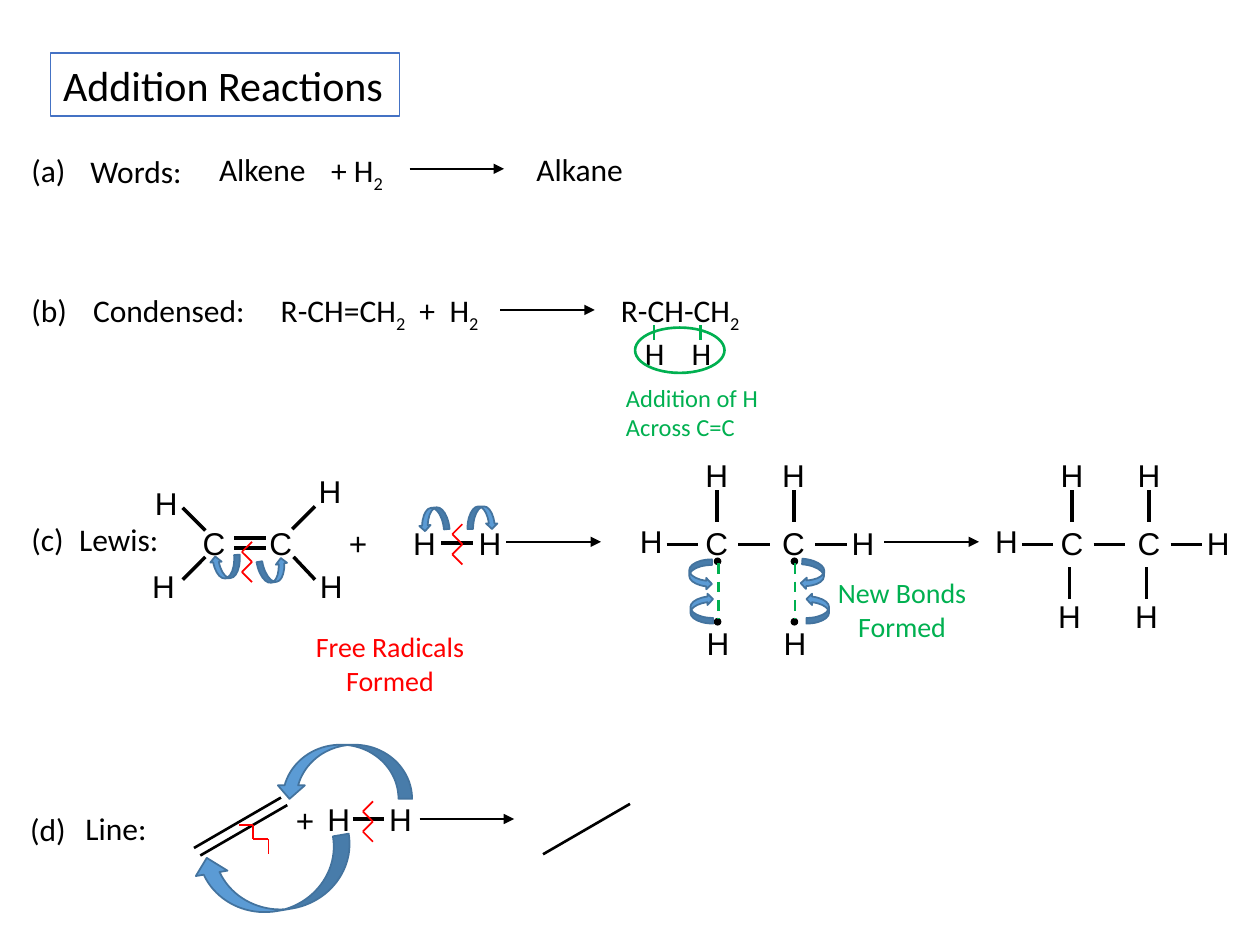
"""Build a slide that shows hydrogen addition to an alkene in four notations."""
import itertools

import pptx
import pptx.dml.color
import pptx.enum.dml
import pptx.enum.shapes
import pptx.enum.text
import pptx.oxml.ns
import pptx.util
from lxml import etree

PX = 9144
BLACK = pptx.dml.color.RGBColor(0, 0, 0)
WHITE = pptx.dml.color.RGBColor(255, 255, 255)
RED = pptx.dml.color.RGBColor(255, 0, 0)
GREEN = pptx.dml.color.RGBColor(0, 176, 80)
FRAME_BLUE = pptx.dml.color.RGBColor(0x44, 0x72, 0xC4)
ARROW_BLUE = pptx.dml.color.RGBColor(0x5B, 0x9B, 0xD5)
ARROW_EDGE = pptx.dml.color.RGBColor(0x43, 0x73, 0x9E)
SHAPES = pptx.enum.shapes.MSO_SHAPE
ALIGN = pptx.enum.text.PP_ALIGN
FIT = pptx.enum.text.MSO_AUTO_SIZE


def px(*lengths):
    """Turn px lengths into EMU."""
    return [pptx.util.Emu(length * PX) for length in lengths]


def write(box, text, size=18, font="Calibri", color=BLACK, align=ALIGN.LEFT,
          fit=FIT.SHAPE_TO_FIT_TEXT):
    """Fill a box with lines of text, where _ switches subscript on and off."""
    frame = box.text_frame
    frame.word_wrap = False
    frame.auto_size = fit
    frame.vertical_anchor = pptx.enum.text.MSO_ANCHOR.TOP
    for index, line in enumerate(text.split("\n")):
        para = frame.add_paragraph() if index else frame.paragraphs[0]
        para.alignment = align
        for position, part in enumerate(line.split("_")):
            if not part:
                continue
            span = para.add_run()
            span.text = part
            span.font.size = pptx.util.Pt(size)
            span.font.name = font
            span.font.color.rgb = color
            if position % 2:
                span.font._element.set("baseline", "-25000")


def label(page, text, x, y, width, height=40, **style):
    """Add a text box."""
    write(page.shapes.add_textbox(*px(x, y, width, height)), text, **style)


def atom(page, symbol, x, y):
    """Add one atom or plus sign of a structure."""
    label(page, symbol, x, y, 35 if symbol == "+" else 38, font="Arial")


def stroke(page, start, end, color=BLACK, width=2, dashed=False, arrow=False):
    """Draw a straight line, optionally dashed or with an arrowhead."""
    line = page.shapes.add_connector(
        pptx.enum.shapes.MSO_CONNECTOR.STRAIGHT, *px(*start, *end))
    line.line.color.rgb = color
    line.line.width = pptx.util.Pt(width)
    if dashed:
        line.line.dash_style = pptx.enum.dml.MSO_LINE.DASH
    if arrow:
        head = etree.SubElement(line.line._get_or_add_ln(), pptx.oxml.ns.qn("a:tailEnd"))
        head.set("type", "triangle")
    etree.SubElement(line._element.spPr, pptx.oxml.ns.qn("a:effectLst"))


def reaction_arrow(page, x, y):
    """Draw the arrow from reactants to products."""
    stroke(page, (x, y), (x + 75, y), width=1, arrow=True)


def break_mark(page, points):
    """Draw a red broken line through the points."""
    for start, end in itertools.pairwise(points):
        stroke(page, start, end, RED, 1)


def zigzag(page, x, y):
    """Mark a broken bond with four slanted strokes."""
    break_mark(page, [(x + 8 * (1 - step % 2), y + 8 * step) for step in range(5)])


def solid(page, kind, place, fill, edge, width, rotation=0, flip=""):
    """Add a preset shape, flipped along the axes named in flip."""
    shape = page.shapes.add_shape(kind, *px(*place))
    shape.shadow.inherit = False
    if fill is None:
        shape.fill.background()
    else:
        shape.fill.solid()
        shape.fill.fore_color.rgb = fill
    shape.line.color.rgb = edge
    shape.line.width = pptx.util.Pt(width)
    shape.rotation = rotation
    for axis in flip:
        shape._element.spPr.get_or_add_xfrm().set("flip" + axis, "1")


def curl(page, kind, place, rotation, flip):
    """Add a curved arrow for a moving electron."""
    solid(page, kind, place, ARROW_BLUE, ARROW_EDGE, 1, rotation, flip)


def ethane_top(page, x):
    """Draw the two carbons with their upper and outer hydrogens."""
    for offset in (31, 88, 149):
        stroke(page, (x + offset, 432), (x + offset + 25, 432))
    for offset in (52, 113):
        stroke(page, (x + offset + 19, 389), (x + offset + 19, 414))
        atom(page, "C", x + offset, 411)
        atom(page, "H", x + offset, 357)
    atom(page, "H", x, 409)
    atom(page, "H", x + 168, 411)


def draw_title(page):
    """Place and format the framed title."""
    title = page.shapes.title
    title.left, title.top, title.width, title.height = px(40, 42, 277, 50)
    title.fill.solid()
    title.fill.fore_color.rgb = WHITE
    title.line.color.rgb = FRAME_BLUE
    title.line.width = pptx.util.Pt(1)
    write(title, "Addition Reactions", size=24, fit=FIT.NONE)


def draw_words_and_condensed(page):
    """Draw rows (a) and (b)."""
    for text, x, y, width in (
            ("(a)", 15, 115, 48), ("Words:", 62, 116, 93), ("Alkene", 164, 114, 90),
            ("+ H_2_", 253, 115, 63), ("Alkane", 416, 114, 90),
            ("(b)", 15, 226, 49), ("Condensed:", 64, 226, 142),
            ("R-CH=CH_2_", 213, 226, 126), ("+", 323, 226, 33), ("H_2_", 347, 226, 43),
            ("R-CH-CH_2_", 483, 226, 116), ("H", 502, 260, 36), ("H", 539, 260, 36)):
        label(page, text, x, y, width)
    reaction_arrow(page, 325, 134)
    reaction_arrow(page, 397, 246)
    solid(page, SHAPES.OVAL, (504, 260, 71, 36), None, GREEN, 1.5)
    for x in (519, 556):
        stroke(page, (x, 258), (x, 270), GREEN, 1.5)
    label(page, "Addition of H\nAcross C=C", 487, 299, 126, 57, size=14, color=GREEN)


def draw_lewis(page):
    """Draw row (c)."""
    label(page, "(c)", 15, 408, 46)
    label(page, "Lewis:", 53, 408, 84)
    for symbol, x, y in (
            ("C", 151, 411), ("C", 204, 411), ("H", 113, 379), ("H", 111, 445),
            ("H", 244, 445), ("H", 243, 370), ("+", 267, 411), ("H", 318, 411),
            ("H", 370, 411)):
        atom(page, symbol, x, y)
    for start, end in (
            ((186, 427), (211, 427)), ((186, 435), (211, 435)), ((145, 460), (163, 442)),
            ((232, 420), (250, 402)), ((233, 442), (250, 460)), ((145, 403), (163, 421)),
            ((350, 431), (375, 431))):
        stroke(page, start, end)
    zigzag(page, 192, 430)
    zigzag(page, 359, 416)
    reaction_arrow(page, 402, 430)
    reaction_arrow(page, 702, 430)
    ethane_top(page, 498)
    ethane_top(page, 780)
    for column in (0, 61):
        stroke(page, (849 + column, 450), (849 + column, 475))
        atom(page, "H", 830 + column, 469)
        atom(page, "H", 551 + column, 490)
        for y in (443, 491):
            solid(page, SHAPES.OVAL, (567 + column, y, 5, 5), BLACK, BLACK, 0.75)
        stroke(page, (570 + column, 447), (570 + column, 491), GREEN, 1.5, dashed=True)
    for x, y, rotation, flip in (
            (335, 400, 264.8, "V"), (374, 399, 90.1, "HV"), (208, 441, 80.4, "V"),
            (170, 438, 265.7, "HV"), (548, 471, 0, "HV"), (547, 444, 180, "V"),
            (636, 444, 184.1, "HV"), (640, 471, 0, "V")):
        curl(page, SHAPES.CURVED_LEFT_ARROW, (x, y, 18, 24), rotation, flip)
    for text, x, y, width, color in (
            ("Free Radicals\nFormed", 240, 495, 139, RED),
            ("New Bonds\nFormed", 654, 452, 124, GREEN)):
        label(page, text, x, y, width, 64, size=16, color=color, align=ALIGN.CENTER)


def draw_line_notation(page):
    """Draw row (d)."""
    label(page, "(d)", 14, 638, 49)
    label(page, "Line:", 58, 637, 69)
    for x, y in ((431, 678), (154, 673), (159, 679)):
        stroke(page, (x, y), (x + 69, y - 40), width=1.5)
    curl(page, SHAPES.CURVED_UP_ARROW, (219, 591, 108, 43), 180, "")
    curl(page, SHAPES.CURVED_UP_ARROW, (155, 672, 127, 51), 350.3, "H")
    stroke(page, (280, 650), (305, 650))
    for symbol, x, y in (("+", 225, 631), ("H", 250, 630), ("H", 299, 630)):
        atom(page, symbol, x, y)
    zigzag(page, 288, 636)
    break_mark(page, [(190, 655), (201, 655), (201, 666), (213, 666), (213, 678)])
    reaction_arrow(page, 333, 650)


def main():
    """Build and save the deck."""
    deck = pptx.Presentation()
    deck.slide_width, deck.slide_height = px(1000, 750)
    page = deck.slides.add_slide(deck.slide_layouts.get_by_name("Title Only"))
    draw_title(page)
    draw_words_and_condensed(page)
    draw_lewis(page)
    draw_line_notation(page)
    deck.save("out.pptx")


if __name__ == "__main__":
    main()
